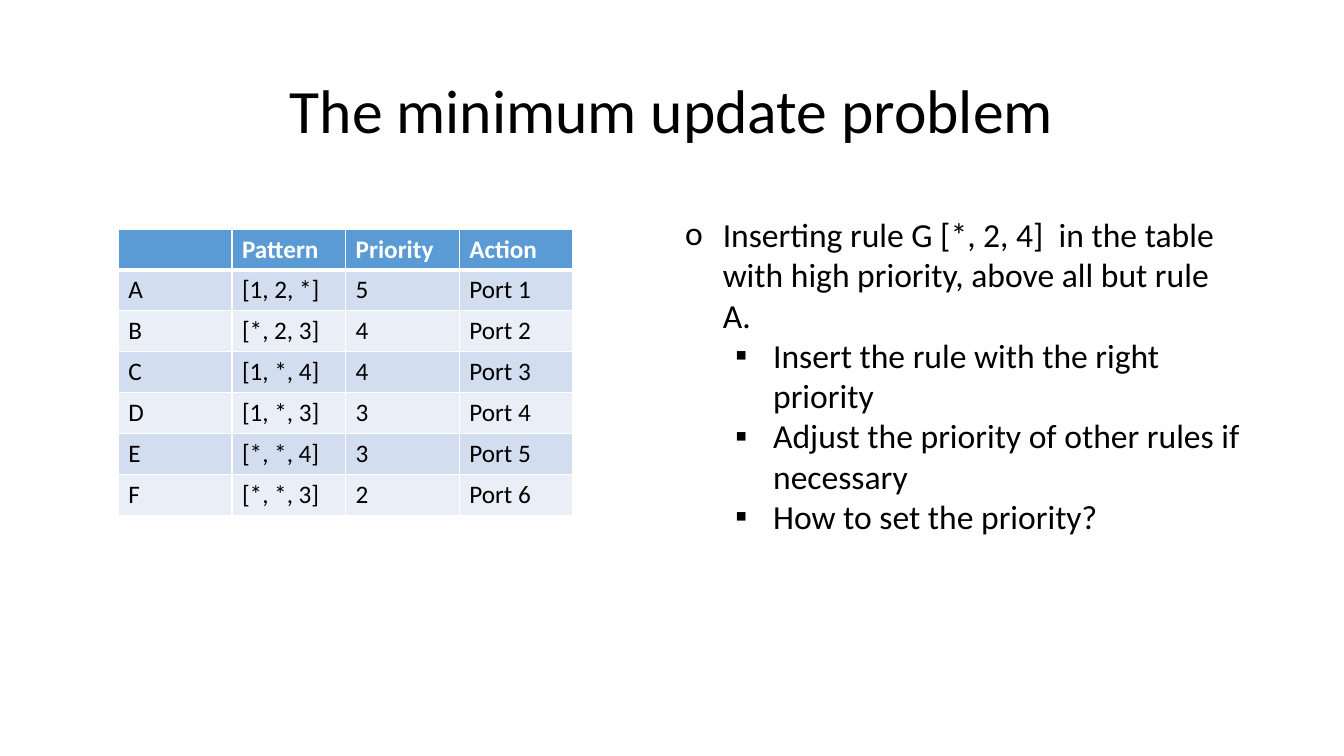
import pptx
import pptx.dml.color
import pptx.enum.text
import pptx.util
from lxml import etree
from pptx.oxml.ns import qn
from pptx.util import Cm, Pt

FONT = "Calibri"
COLOURS = {
    "text": "000000",
    "white": "FFFFFF",
    "header": "5B9BD5",
    "band_dark": "D2DEEF",
    "band_light": "EAEFF7",
}
TITLE = "The minimum update problem"
RULES = [
    ("", "Pattern", "Priority", "Action"),
    ("A", "[1, 2, *]", "5", "Port 1"),
    ("B", "[*, 2, 3]", "4", "Port 2"),
    ("C", "[1, *, 4]", "4", "Port 3"),
    ("D", "[1, *, 3]", "3", "Port 4"),
    ("E", "[*, *, 4]", "3", "Port 5"),
    ("F", "[*, *, 3]", "2", "Port 6"),
]
STEPS = [
    (0, "Inserting rule G [*, 2, 4]  in the table with high priority, above all but rule A."),
    (1, "Insert the rule with the right priority"),
    (1, "Adjust the priority of other rules if necessary"),
    (1, "How to set the priority?"),
]
BULLETS = ["o", "▪"]


def colour(name):
    return pptx.dml.color.RGBColor.from_string(COLOURS[name])


def style(para, size, shade="text", bold=False):
    para.font.name = FONT
    para.font.size = Pt(size)
    para.font.bold = bold
    para.font.color.rgb = colour(shade)


def place(shape, box):
    shape.left, shape.top, shape.width, shape.height = box


def add_bullet(para, level):
    props = para._p.get_or_add_pPr()
    props.set("marL", str(Cm(0.95 + 1.27 * level)))
    props.set("indent", str(-Cm(0.95)))
    etree.SubElement(props, qn("a:buFont")).set("typeface", FONT)
    etree.SubElement(props, qn("a:buChar")).set("char", BULLETS[level])


def add_borders(cell, widths):
    props = cell._tc.get_or_add_tcPr()
    for side, width in widths.items():
        line = etree.SubElement(props, qn(f"a:ln{side}"), w=str(Pt(width)))
        fill = etree.SubElement(line, qn("a:solidFill"))
        etree.SubElement(fill, qn("a:srgbClr"), val=COLOURS["white"])


def fill_title(title, box):
    place(title, box)
    title.text_frame.text = TITLE
    title.text_frame.vertical_anchor = pptx.enum.text.MSO_ANCHOR.MIDDLE
    para = title.text_frame.paragraphs[0]
    para.alignment = pptx.enum.text.PP_ALIGN.CENTER
    para.line_spacing = 0.9
    style(para, 44)


def add_rule_table(page, box):
    table = page.shapes.add_table(len(RULES), len(RULES[0]), *box).table
    for row, values in enumerate(RULES):
        header = row == 0
        band = "header" if header else ("band_light", "band_dark")[row % 2]
        widths = {"L": 1, "R": 1, "T": 3 if row == 1 else 1, "B": 3 if header else 1}
        for column, value in enumerate(values):
            cell = table.cell(row, column)
            add_borders(cell, widths)
            cell.fill.solid()
            cell.fill.fore_color.rgb = colour(band)
            cell.text = value
            style(cell.text_frame.paragraphs[0], 18, "white" if header else "text", header)


def fill_steps(body, box):
    place(body, box)
    frame = body.text_frame
    frame.word_wrap = True
    frame.auto_size = pptx.enum.text.MSO_AUTO_SIZE.SHAPE_TO_FIT_TEXT
    frame.text = "\n".join(text for level, text in STEPS)
    for para, (level, text) in zip(frame.paragraphs, STEPS):
        para.level = level
        para.space_before = Pt(0)
        add_bullet(para, level)
        style(para, 24)


def main():
    deck = pptx.Presentation()
    deck.slide_width, deck.slide_height = Cm(33.87), Cm(19.05)
    page = deck.slides.add_slide(deck.slide_layouts[1])
    fill_title(page.shapes.title, (Cm(2.33), Cm(1.01), Cm(29.21), Cm(3.68)))
    add_rule_table(page, (Cm(2.98), Cm(5.77), Cm(11.46), Cm(7.21)))
    fill_steps(page.placeholders[1], (Cm(17.01), Cm(5.26), Cm(14.53), Cm(9.24)))
    deck.save("out.pptx")


if __name__ == "__main__":
    main()
